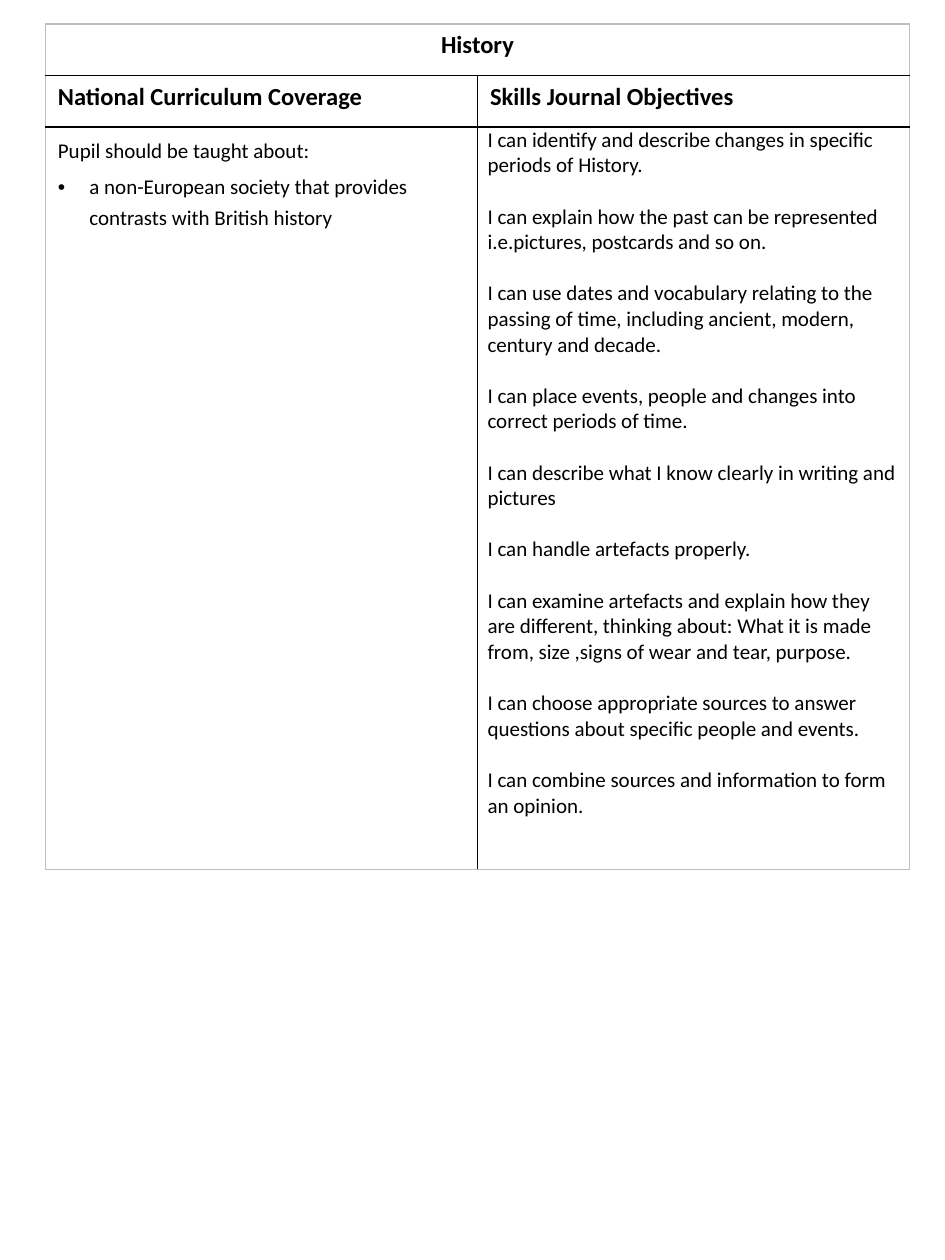
from lxml import etree
from pptx import Presentation
from pptx.dml.color import RGBColor
from pptx.enum.text import PP_ALIGN
from pptx.oxml.ns import qn
from pptx.util import Inches, Pt

CENTER = PP_ALIGN.CENTER

# Content
TITLE = "History"
HEADS = ["National Curriculum Coverage", "Skills Journal Objectives"]
INTRO = "Pupil should be taught about:"
TOPIC = "a non-European society that provides contrasts with British history"
GOALS = [
    ["I can identify and describe changes in specific periods of History."],
    ["I can explain how the past can be represented i.e.pictures, postcards and so on."],
    ["I can use dates and vocabulary relating to the",
     "passing of time, including ancient, modern, century and decade."],
    ["I can place events, people and changes into correct periods of time."],
    ["I can describe what I know clearly in writing and pictures"],
    ["I can handle artefacts properly."],
    ["I can examine artefacts and explain how they are different, thinking about: "
     "What it is made from, size ,signs of wear and tear, purpose."],
    ["I can choose appropriate sources to answer questions about specific people and events."],
    ["I can combine sources and information to form an opinion."],
]

THEME = {"font": "Calibri", "ink": "000000", "edge": "BFBFBF", "head": 14, "body": 12, "gap": 14.65}
LEFT, TOP = 0.36, 0.19
COLS = [3.43, 3.43]
ROWS = [0.41, 0.41, 5.89]


def write(cell, text, size=THEME["body"], bold=False, align=None,
          before=0, after=0, line=None, hang=0, bullet=None):
    """Add one paragraph to a cell, filling the first if it is empty."""
    frame = cell.text_frame
    para = frame.add_paragraph() if frame.text else frame.paragraphs[0]
    para.alignment = align
    para.space_before, para.space_after = Pt(before), Pt(after)
    if line:
        para.line_spacing = line
    run = para.add_run()
    run.text = text
    font = run.font
    font.name, font.size, font.bold = THEME["font"], Pt(size), bold
    font.color.rgb = RGBColor.from_string(THEME["ink"])
    props = para._p.get_or_add_pPr()
    if hang:
        props.set("marL", str(Inches(hang)))
        props.set("indent", str(-Inches(hang)))
    if bullet:
        etree.SubElement(props, qn("a:buFont"), typeface="Arial")
        etree.SubElement(props, qn("a:buChar"), char=bullet)


def border(cell, sides):
    """Draw the four sides; each is a colour and a width in points."""
    props = cell._tc.get_or_add_tcPr()
    for spot, (side, (color, width)) in enumerate(sides.items()):
        ln = etree.Element(qn("a:ln" + side), w=str(Pt(width)))
        fill = etree.SubElement(ln, qn("a:solidFill"))
        etree.SubElement(fill, qn("a:srgbClr"), val=color)
        props.insert(spot, ln)


prs = Presentation()
prs.slide_width, prs.slide_height = Inches(7.5), Inches(10)
slide = prs.slides.add_slide(prs.slide_layouts[6])

# Table grid
grid = slide.shapes.add_table(len(ROWS), len(COLS), Inches(LEFT), Inches(TOP),
                              Inches(sum(COLS)), Inches(sum(ROWS))).table
grid.first_row = grid.horz_banding = False
for col, width in zip(grid.columns, COLS):
    col.width = Inches(width)
for row, height in zip(grid.rows, ROWS):
    row.height = Inches(height)

# Fills and borders: grey outside, black inside
edge, rule = (THEME["edge"], 1), (THEME["ink"], 1)
for r in range(len(ROWS)):
    for c in range(len(COLS)):
        cell = grid.cell(r, c)
        cell.fill.background()
        border(cell, {
            "L": edge if c == 0 else rule,
            "R": edge if r == 0 or c == len(COLS) - 1 else rule,
            "T": edge if r == 0 else rule,
            "B": edge if r == len(ROWS) - 1 else rule,
        })
grid.cell(0, 0).merge(grid.cell(0, 1))

# Headings
write(grid.cell(0, 0), TITLE, size=THEME["head"], bold=True, align=CENTER)
for c, head in enumerate(HEADS):
    write(grid.cell(1, c), head, size=THEME["head"], bold=True)

# Curriculum coverage
for text, mark in [(INTRO, None), (TOPIC, "•")]:
    write(grid.cell(2, 0), text, after=3, line=1.2, hang=0.25, bullet=mark)

# Objectives, one blank line's space between them
goals = grid.cell(2, 1)
goals.margin_left = goals.margin_right = Inches(0.08)
goals.margin_top = goals.margin_bottom = 0
for g, lines in enumerate(GOALS):
    for n, text in enumerate(lines):
        write(goals, text, before=THEME["gap"] if g and n == 0 else 0)

prs.save("out.pptx")
